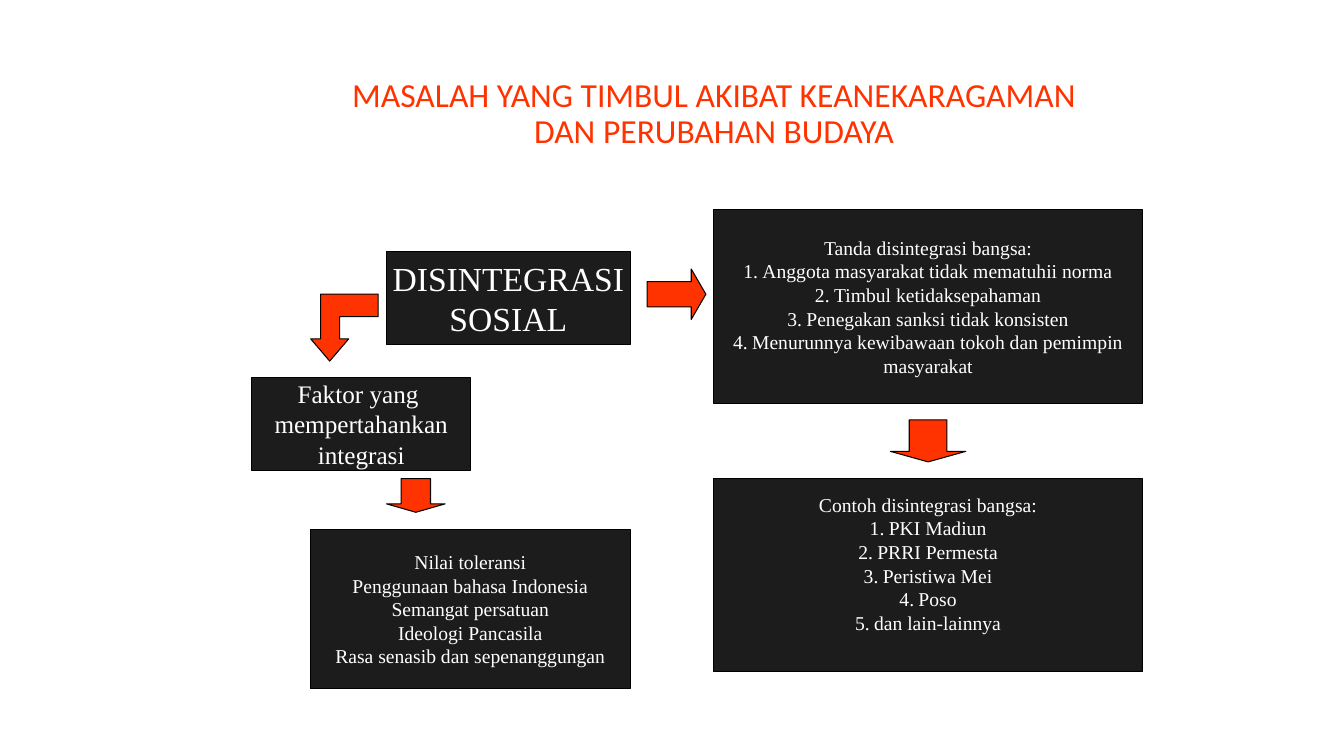
"""Builds the slide on social disintegration."""
from dataclasses import dataclass, field

from lxml.etree import SubElement
from pptx import Presentation
from pptx.dml.color import RGBColor
from pptx.enum.shapes import MSO_SHAPE
from pptx.enum.text import MSO_ANCHOR, PP_ALIGN
from pptx.oxml.ns import qn
from pptx.shapes.autoshape import Shape
from pptx.slide import Slide
from pptx.text.text import TextFrame
from pptx.util import Cm, Pt


@dataclass(frozen=True)
class Theme:
    """Colours, fonts and type sizes of the slide."""
    accent: RGBColor = RGBColor(0xFF, 0x33, 0x00)
    panel: RGBColor = RGBColor(0x1C, 0x1C, 0x1C)
    outline: RGBColor = RGBColor(0x00, 0x00, 0x00)
    light: RGBColor = RGBColor(0xFF, 0xFF, 0xFF)
    title_font: str = "Calibri"
    body_font: str = "Times New Roman"
    large: Pt = Pt(24)
    medium: Pt = Pt(18)
    small: Pt = Pt(14)
    line_width: Pt = Pt(0.75)


THEME = Theme()


@dataclass(frozen=True)
class Frame:
    """Left, top, width and height in centimetres."""
    left: float
    top: float
    width: float
    height: float

    def lengths(self) -> tuple[Cm, Cm, Cm, Cm]:
        """Return the four values as lengths."""
        return Cm(self.left), Cm(self.top), Cm(self.width), Cm(self.height)


@dataclass(frozen=True)
class Panel:
    """A dark box with centred lines, some of them numbered."""
    frame: Frame
    lines: tuple[str, ...]
    size: Pt = THEME.small
    numbered: range = field(default_factory=lambda: range(0))
    bottom_inset: float = 0.13


@dataclass(frozen=True)
class Arrow:
    """A block arrow with its shaft and head proportions."""
    frame: Frame
    preset: MSO_SHAPE
    head: float = 0.25


TITLE = "MASALAH YANG TIMBUL AKIBAT KEANEKARAGAMAN DAN PERUBAHAN BUDAYA"
TITLE_FRAME = Frame(8.05, 1.27, 19.89, 3.23)
HANGING = 0.48

PANELS = (
    Panel(Frame(9.74, 6.35, 6.14, 2.33), ("DISINTEGRASI", "SOSIAL"), THEME.large),
    Panel(Frame(17.99, 5.29, 10.8, 4.87), (
        "Tanda disintegrasi bangsa:",
        "Anggota masyarakat tidak mematuhii norma",
        "Timbul ketidaksepahaman",
        "Penegakan sanksi tidak konsisten",
        "Menurunnya kewibawaan tokoh dan pemimpin",
        "masyarakat",
    ), numbered=range(1, 5)),
    Panel(Frame(17.99, 12.06, 10.8, 4.87), (
        "Contoh disintegrasi bangsa:",
        "PKI Madiun",
        "PRRI Permesta",
        "Peristiwa Mei",
        "Poso",
        "dan lain-lainnya",
    ), numbered=range(1, 6), bottom_inset=0.72),
    Panel(Frame(6.35, 9.52, 5.51, 2.33),
          ("Faktor yang ", "mempertahankan", "integrasi"), THEME.medium),
    Panel(Frame(7.83, 13.34, 8.05, 4.02), (
        "Nilai toleransi",
        "Penggunaan bahasa Indonesia",
        "Semangat persatuan",
        "Ideologi Pancasila",
        "Rasa senasib dan sepenanggungan",
    )),
)

ARROWS = (
    Arrow(Frame(16.31, 6.78, 1.48, 1.27), MSO_SHAPE.RIGHT_ARROW, 0.29),
    Arrow(Frame(22.44, 10.58, 1.9, 1.06), MSO_SHAPE.DOWN_ARROW),
    Arrow(Frame(9.74, 12.06, 1.48, 0.85), MSO_SHAPE.DOWN_ARROW),
)

BENT_ARROW = (
    (8.31, 9.1), (8.79, 8.54), (8.56, 8.54), (8.56, 7.98), (9.53, 7.98),
    (9.53, 7.41), (8.08, 7.41), (8.08, 8.54), (7.83, 8.54),
)


def apply(target: object, values: dict[str, object]) -> None:
    """Set every named value on the target."""
    for name, value in values.items():
        setattr(target, name, value)


def paint(shape: Shape, fill: RGBColor) -> None:
    """Give a shape a flat fill and the thin outline."""
    shape.shadow.inherit = False
    shape.fill.solid()
    shape.fill.fore_color.rgb = fill
    shape.line.color.rgb = THEME.outline
    shape.line.width = THEME.line_width


def number(properties: object) -> None:
    """Add automatic numbering to paragraph properties."""
    SubElement(properties, qn("a:buFont"), typeface="+mj-lt")
    SubElement(properties, qn("a:buAutoNum"), type="arabicPeriod")


def write(frame: TextFrame, lines: tuple[str, ...], font: dict[str, object],
          color: RGBColor, spacing: float = 1.0,
          numbered: range = range(0)) -> None:
    """Write centred lines and number those in the range."""
    for index, line in enumerate(lines):
        para = frame.paragraphs[0] if index == 0 else frame.add_paragraph()
        apply(para, {"alignment": PP_ALIGN.CENTER, "line_spacing": spacing})
        if numbered:
            properties = para._p.get_or_add_pPr()
            properties.set("marL", str(Cm(HANGING)))
            properties.set("indent", str(-Cm(HANGING)))
            if index in numbered:
                number(properties)
        span = para.add_run()
        span.text = line
        apply(span.font, font)
        span.font.color.rgb = color


def add_title(page: Slide) -> None:
    """Place the slide heading."""
    box = page.shapes.add_textbox(*TITLE_FRAME.lengths())
    apply(box.text_frame, {"word_wrap": True, "vertical_anchor": MSO_ANCHOR.MIDDLE})
    font = {"name": THEME.title_font, "size": THEME.large}
    write(box.text_frame, (TITLE,), font, THEME.accent, spacing=0.9)


def add_panel(page: Slide, panel: Panel) -> None:
    """Place a dark text box."""
    box = page.shapes.add_shape(MSO_SHAPE.RECTANGLE, *panel.frame.lengths())
    paint(box, THEME.panel)
    apply(box.text_frame, {
        "word_wrap": False,
        "vertical_anchor": MSO_ANCHOR.MIDDLE,
        "margin_bottom": Cm(panel.bottom_inset),
    })
    font = {"name": THEME.body_font, "size": panel.size}
    write(box.text_frame, panel.lines, font, THEME.light, numbered=panel.numbered)


def add_arrow(page: Slide, arrow: Arrow) -> None:
    """Place a straight block arrow."""
    shape = page.shapes.add_shape(arrow.preset, *arrow.frame.lengths())
    shape.adjustments[0] = 0.5
    shape.adjustments[1] = arrow.head
    paint(shape, THEME.accent)


def add_bent_arrow(page: Slide) -> None:
    """Place the arrow that turns from left to down."""
    start, *corners = [(Cm(x), Cm(y)) for x, y in BENT_ARROW]
    builder = page.shapes.build_freeform(*start)
    builder.add_line_segments(corners, close=True)
    paint(builder.convert_to_shape(), THEME.accent)


def main() -> None:
    """Build and save the deck."""
    deck = Presentation()
    apply(deck, {"slide_width": Cm(33.87), "slide_height": Cm(19.05)})
    page = deck.slides.add_slide(deck.slide_layouts[6])
    add_title(page)
    for panel in PANELS:
        add_panel(page, panel)
    for arrow in ARROWS:
        add_arrow(page, arrow)
    add_bent_arrow(page)
    deck.save("out.pptx")


if __name__ == "__main__":
    main()
